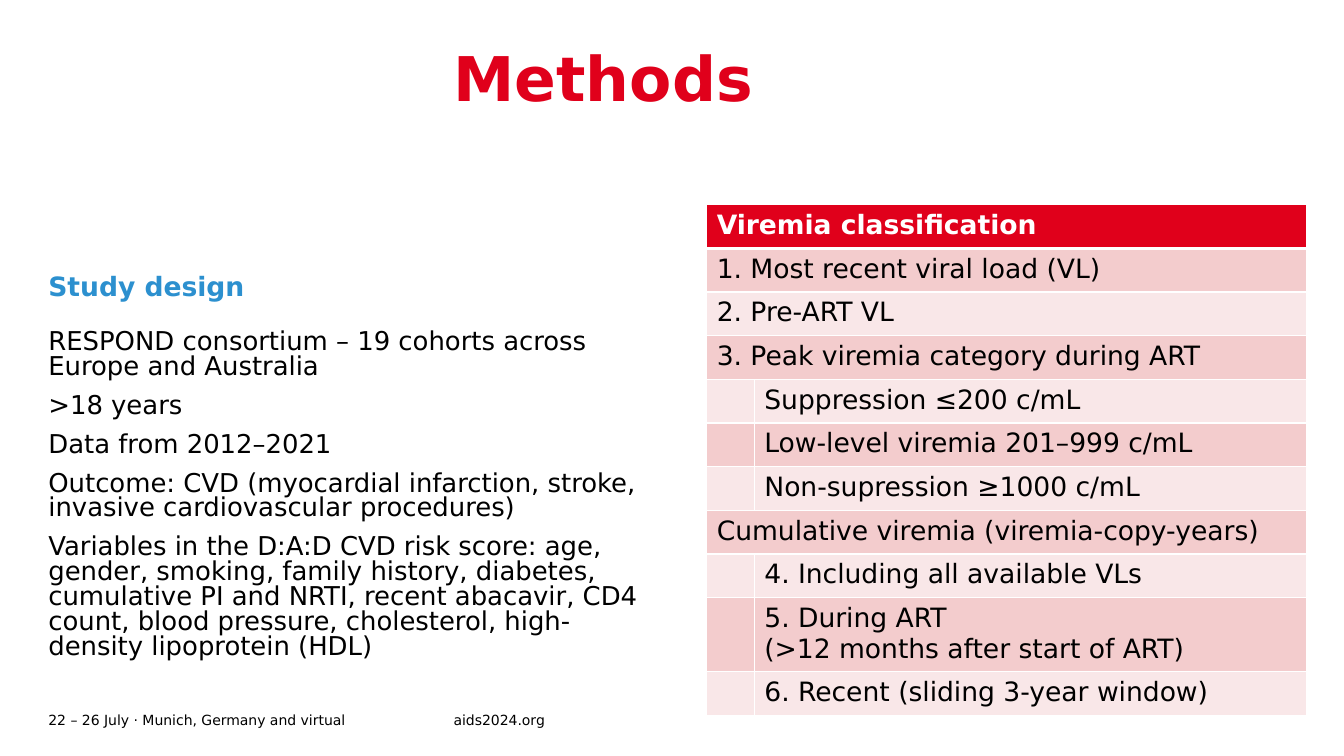
from dataclasses import dataclass

from lxml.etree import SubElement
from pptx import Presentation
from pptx.dml.color import RGBColor as RGB
from pptx.enum.text import MSO_ANCHOR as Anchor
from pptx.oxml.ns import qn
from pptx.util import Cm, Pt

TITLE = "Methods"
HEADING = "Study design"
DESIGN = [
    "RESPOND consortium – 19 cohorts across Europe and Australia",
    ">18 years",
    "Data from 2012–2021",
    "Outcome: CVD (myocardial infarction, stroke, invasive cardiovascular procedures)",
    "Variables in the D:A:D CVD risk score: age, gender, smoking, family history, "
    "diabetes, cumulative PI and NRTI, recent abacavir, CD4 count, blood pressure, "
    "cholesterol, high-density lipoprotein (HDL)",
]
EVENT = "22 – 26 July · Munich, Germany and virtual"
SITE = "aids2024.org"
CLASSIFICATION = [
    (0, "Viremia classification"),
    (0, "1. Most recent viral load (VL)"),
    (0, "2. Pre-ART VL"),
    (0, "3. Peak viremia category during ART"),
    (1, "Suppression ≤200 c/mL"),
    (1, "Low-level viremia 201–999 c/mL"),
    (1, "Non-supression ≥1000 c/mL"),
    (0, "Cumulative viremia (viremia-copy-years)"),
    (1, "4. Including all available VLs"),
    (1, "5. During ART \n(>12 months after start of ART)"),
    (1, "6. Recent (sliding 3-year window)"),
]


@dataclass(frozen=True)
class Theme:
    font: str = "DejaVu Sans"
    red: str = "E0001B"
    blue: str = "2C90CF"
    black: str = "000000"
    white: str = "FFFFFF"
    bands: tuple = ("F9E7E8", "F3CCCD")
    title: float = 44
    heading: float = 19
    body: float = 18.5
    footer: float = 10


T = Theme()
LEFT, MIDDLE = 1.22, 11.43
COLUMN_W = 15.11
FOOTER_Y, FOOTER_H = 17.83, 0.61
TABLE_X, TABLE_Y = 17.81, 5.16
INDENT_W, ROW_H = 1.2, 1.1


def style(p, size, color, bold=False):
    p.font.name, p.font.size, p.font.bold = T.font, Pt(size), bold
    p.font.color.rgb = RGB.from_string(color)


def add_text(s, box, lines, size, color, bold=False, anchor=Anchor.TOP, spacing=1.0):
    tf = s.shapes.add_textbox(*map(Cm, box)).text_frame
    tf.word_wrap = True
    tf.vertical_anchor = anchor
    tf.margin_left = tf.margin_top = tf.margin_right = tf.margin_bottom = 0
    for i, line in enumerate(lines):
        p = tf.add_paragraph() if i else tf.paragraphs[0]
        p.text = line
        p.line_spacing = spacing
        p.space_before = Pt(10 if i else 0)
        style(p, size, color, bold)


def add_borders(cell, header_side):
    tc_pr = cell._tc.get_or_add_tcPr()
    for side in "LRTB":
        width = 3 if side == header_side else 1
        ln = SubElement(tc_pr, qn(f"a:ln{side}"), w=str(Pt(width)))
        fill = SubElement(ln, qn("a:solidFill"))
        SubElement(fill, qn("a:srgbClr"), val=T.white)


def add_classification(s):
    n = len(CLASSIFICATION)
    box = (TABLE_X, TABLE_Y, COLUMN_W, n * ROW_H)
    table = s.shapes.add_table(n, 2, *map(Cm, box)).table
    table.columns[0].width = Cm(INDENT_W)
    table.columns[1].width = Cm(COLUMN_W - INDENT_W)
    for i, (level, text) in enumerate(CLASSIFICATION):
        header = i == 0
        table.rows[i].height = Cm(ROW_H)
        for cell in table.rows[i].cells:
            add_borders(cell, {0: "B", 1: "T"}.get(i))
            cell.fill.solid()
            cell.fill.fore_color.rgb = RGB.from_string(T.red if header else T.bands[i % 2])
        if level == 0:
            table.cell(i, 0).merge(table.cell(i, 1))
        p = table.cell(i, level).text_frame.paragraphs[0]
        p.text = text
        style(p, T.heading, T.white if header else T.black, header)


def main():
    prs = Presentation()
    prs.slide_width, prs.slide_height = Cm(33.87), Cm(19.05)
    s = prs.slides.add_slide(prs.slide_layouts[6])
    add_text(s, (MIDDLE, 1.22, 21.21, 3.4), [TITLE], T.title, T.red, True, spacing=0.9)
    add_text(s, (LEFT, 5.82, COLUMN_W, 1.8), [HEADING], T.heading, T.blue, True,
             Anchor.BOTTOM, 0.9)
    add_text(s, (LEFT, 8.33, COLUMN_W, 8.89), DESIGN, T.body, T.black, spacing=0.8)
    add_classification(s)
    for x, w, text in [(LEFT, MIDDLE - LEFT, EVENT), (MIDDLE, 4.9, SITE)]:
        add_text(s, (x, FOOTER_Y, w, FOOTER_H), [text], T.footer, T.black,
                 anchor=Anchor.MIDDLE)
    prs.save("out.pptx")


if __name__ == "__main__":
    main()
